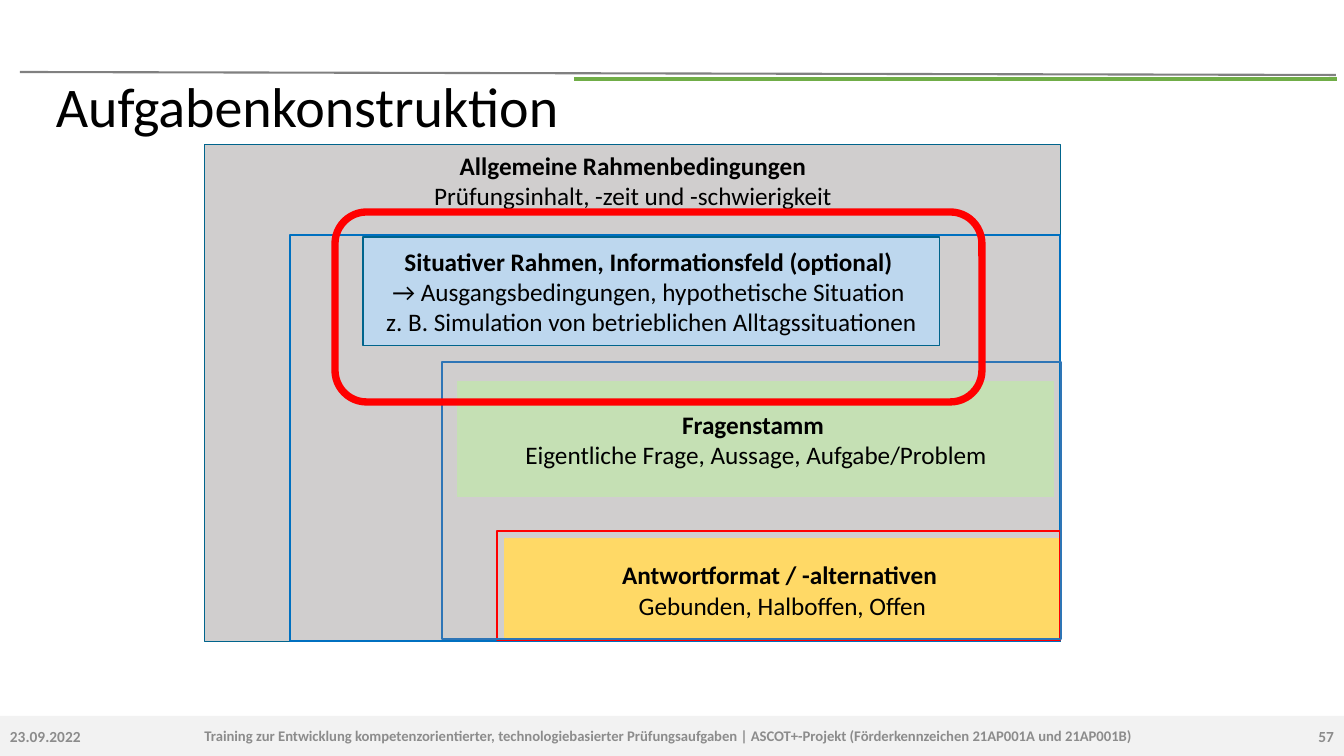
import pptx
import pptx.dml.color
import pptx.enum.shapes
import pptx.enum.text
import pptx.oxml
import pptx.util
import lxml.etree

RGBColor = pptx.dml.color.RGBColor
SHAPE = pptx.enum.shapes.MSO_SHAPE
ANCHOR = pptx.enum.text.MSO_ANCHOR
ALIGN = pptx.enum.text.PP_ALIGN

EMU_PER_INCH = 914400
PX_PER_INCH = 100.8
PAGE_WIDTH, PAGE_HEIGHT = 1344, 756
FOOTER_TOP, FOOTER_HEIGHT = 716, 40
FONT = "Calibri"

BLACK = RGBColor(0x00, 0x00, 0x00)
FOOTER_FILL = RGBColor(0xF2, 0xF2, 0xF2)
FOOTER_TEXT = RGBColor(0x8C, 0x8C, 0x8C)
RULE_GRAY = RGBColor(0x80, 0x80, 0x80)
RULE_GREEN = RGBColor(0x70, 0xAD, 0x47)
FRAME_GRAY = RGBColor(0xD0, 0xCE, 0xCE)
PETROL = RGBColor(0x00, 0x64, 0x8C)
YELLOW = RGBColor(0xFF, 0xD9, 0x66)
GREEN = RGBColor(0xC5, 0xE0, 0xB4)
LIGHT_BLUE = RGBColor(0xBD, 0xD7, 0xEE)
BLUE = RGBColor(0x00, 0x70, 0xC0)
STEEL_BLUE = RGBColor(0x2E, 0x75, 0xB6)
RED = RGBColor(0xFF, 0x00, 0x00)


def px(length):
    return pptx.util.Emu(round(length * EMU_PER_INCH / PX_PER_INCH))


def write_text(box, text, heading="", size=18, color=BLACK, bold=False,
               align=ALIGN.CENTER, anchor=ANCHOR.MIDDLE, spacing=None):
    frame = box.text_frame
    frame.word_wrap = True
    frame.vertical_anchor = anchor
    para = frame.paragraphs[0]
    para.alignment = align
    if spacing:
        para.line_spacing = spacing
    lines = [(heading, True)] if heading else []
    lines += [(line, bold) for line in text.split("\n")]
    for index, (line, is_bold) in enumerate(lines):
        if index:
            para.add_line_break()
        span = para.add_run()
        span.text = line
        span.font.name = FONT
        span.font.size = pptx.util.Pt(size)
        span.font.bold = is_bold
        span.font.color.rgb = color


def add_box(page, bounds, fill=None, line=None, width=0.75, kind=SHAPE.RECTANGLE):
    box = page.shapes.add_shape(kind, *map(px, bounds))
    box.shadow.inherit = False
    if fill is None:
        box.fill.background()
    else:
        box.fill.solid()
        box.fill.fore_color.rgb = fill
    if line is None:
        box.line.fill.background()
    else:
        box.line.color.rgb = line
        box.line.width = pptx.util.Pt(width)
    return box


def add_rule(page, ends, color, width):
    rule = page.shapes.add_connector(
        pptx.enum.shapes.MSO_CONNECTOR.STRAIGHT, *map(px, ends))
    rule.line.color.rgb = color
    rule.line.width = pptx.util.Pt(width)
    properties = rule.element.spPr
    lxml.etree.SubElement(properties, pptx.oxml.ns.qn("a:effectLst"))


def add_label(page, bounds, text, **style):
    label = page.shapes.add_textbox(*map(px, bounds))
    write_text(label, text, **style)


def add_footer_label(page, left, width, text, size, align):
    add_label(page, (left, FOOTER_TOP, width, FOOTER_HEIGHT), text,
              size=size, color=FOOTER_TEXT, bold=True, align=align)


def main():
    deck = pptx.Presentation()
    deck.slide_width, deck.slide_height = px(PAGE_WIDTH), px(PAGE_HEIGHT)
    page = deck.slides.add_slide(deck.slide_layouts[6])

    add_box(page, (0, FOOTER_TOP, PAGE_WIDTH, FOOTER_HEIGHT), FOOTER_FILL)
    add_rule(page, (20, 72, 1336, 75), RULE_GRAY, 1.5)
    add_rule(page, (574, 79, 1337, 79), RULE_GREEN, 2.25)

    conditions = add_box(page, (205, 145, 856, 497), FRAME_GRAY, PETROL)
    write_text(conditions, "Prüfungsinhalt, -zeit und -schwierigkeit",
               heading="Allgemeine Rahmenbedingungen", anchor=ANCHOR.TOP)
    add_label(page, (46, 80, 1230, 59), "Aufgabenkonstruktion",
              size=40, align=ALIGN.LEFT, spacing=0.9)

    stages = [
        ((505, 539, 555, 102), YELLOW, YELLOW, "Antwortformat / -alternativen ",
         "Gebunden, Halboffen, Offen"),
        ((458, 382, 596, 115), GREEN, GREEN, "Fragenstamm ",
         "Eigentliche Frage, Aussage, Aufgabe/Problem"),
        ((363, 237, 577, 109), LIGHT_BLUE, PETROL,
         "Situativer Rahmen, Informationsfeld (optional) ",
         "→ Ausgangsbedingungen, hypothetische Situation \n"
         "z. B. Simulation von betrieblichen Alltagssituationen"),
    ]
    for bounds, fill, line, heading, text in stages:
        write_text(add_box(page, bounds, fill, line), text, heading=heading)

    outlines = [
        ((290, 235, 770, 406), BLUE),
        ((497, 531, 563, 109), RED),
        ((442, 362, 619, 277), STEEL_BLUE),
    ]
    for bounds, color in outlines:
        add_box(page, bounds, line=color, width=2)
    add_box(page, (335, 212, 647, 190), line=RED, width=5.25,
            kind=SHAPE.ROUNDED_RECTANGLE)

    add_footer_label(page, 0, 171, "23.09.2022", 11, ALIGN.LEFT)
    add_footer_label(
        page, 171, 995,
        "Training zur Entwicklung kompetenzorientierter, technologiebasierter "
        "Prüfungsaufgaben | ASCOT+-Projekt "
        "(Förderkennzeichen 21AP001A und 21AP001B)", 10.5, ALIGN.CENTER)
    add_footer_label(page, 1178, 166, "57", 11, ALIGN.RIGHT)

    deck.save("out.pptx")


if __name__ == "__main__":
    main()
